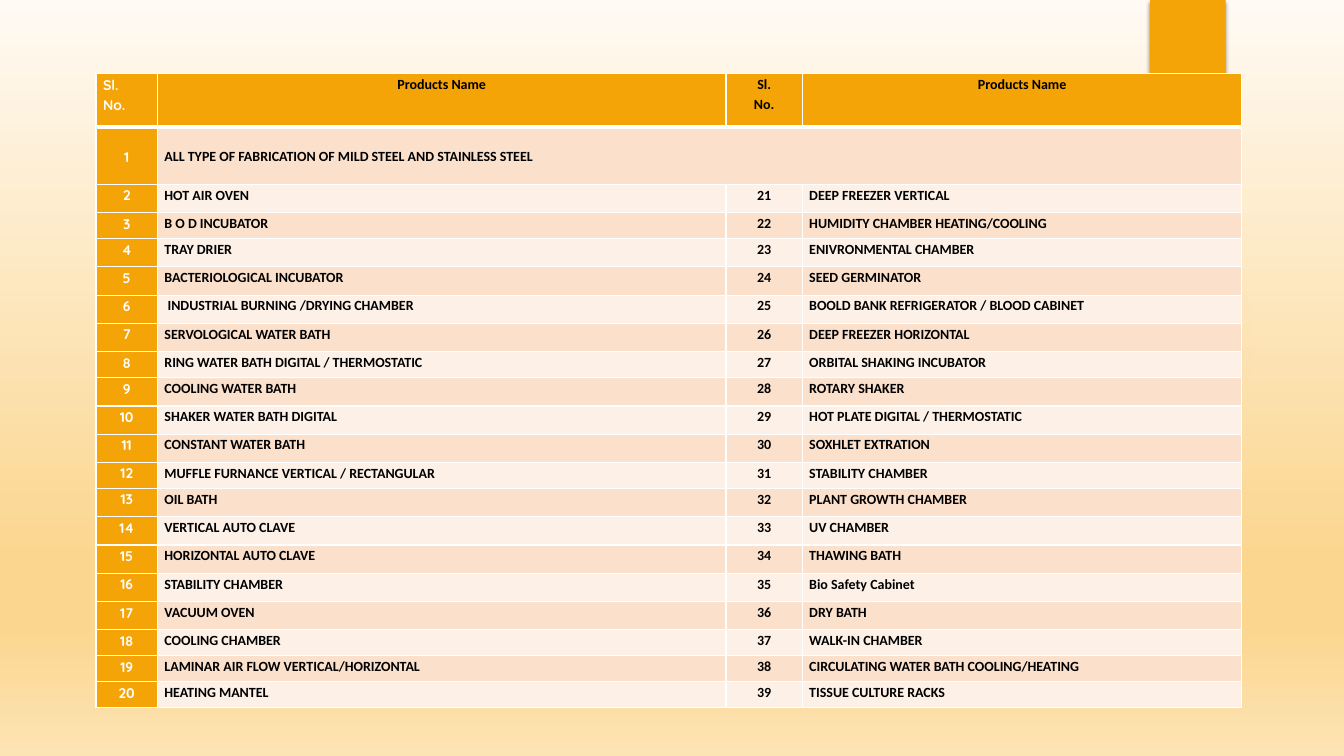
from pptx import Presentation
from pptx.dml.color import RGBColor
from pptx.enum.shapes import MSO_SHAPE as Shape
from pptx.enum.text import MSO_ANCHOR as Anchor, PP_ALIGN as Align
from pptx.oxml import parse_xml
from pptx.oxml.ns import nsdecls, qn
from pptx.util import Pt

GOLD, PEACH, CREAM = "F5A408", "FBE0CC", "FDF0E7"
BLACK, WHITE = "000000", "FFFFFF"
COLS = [43.9, 406.1, 54.5, 314]
SHORT = {3, 8, 12, 18, 19, 20}
FIRST = "ALL TYPE OF FABRICATION OF MILD STEEL AND STAINLESS STEEL"
LEFT = [
    "HOT AIR OVEN", "B O D INCUBATOR", "TRAY DRIER", "BACTERIOLOGICAL INCUBATOR",
    " INDUSTRIAL BURNING /DRYING CHAMBER", "SERVOLOGICAL WATER BATH",
    "RING WATER BATH DIGITAL / THERMOSTATIC", "COOLING WATER BATH",
    "SHAKER WATER BATH DIGITAL", "CONSTANT WATER BATH",
    "MUFFLE FURNANCE VERTICAL / RECTANGULAR", "OIL BATH", "VERTICAL AUTO CLAVE",
    "HORIZONTAL AUTO CLAVE", "STABILITY CHAMBER", "VACUUM OVEN", "COOLING CHAMBER",
    "LAMINAR AIR FLOW VERTICAL/HORIZONTAL", "HEATING MANTEL",
]
RIGHT = [
    "DEEP FREEZER VERTICAL", "HUMIDITY CHAMBER HEATING/COOLING",
    "ENIVRONMENTAL CHAMBER", "SEED GERMINATOR",
    "BOOLD BANK REFRIGERATOR / BLOOD CABINET", "DEEP FREEZER HORIZONTAL",
    "ORBITAL SHAKING INCUBATOR", "ROTARY SHAKER", "HOT PLATE DIGITAL / THERMOSTATIC",
    "SOXHLET EXTRATION", "STABILITY CHAMBER", "PLANT GROWTH CHAMBER", "UV CHAMBER",
    "THAWING BATH", "Bio Safety Cabinet", "DRY BATH", "WALK-IN CHAMBER",
    "CIRCULATING WATER BATH COOLING/HEATING", "TISSUE CULTURE RACKS",
]


def color(code):
    return RGBColor.from_string(code)


def apply(item, values):
    for name, value in values.items():
        setattr(item, name, value)


class Deck:
    """Holds the text style and the current slide."""

    def __init__(self):
        self.prs = Presentation()
        apply(self.prs, {"slide_width": Pt(960), "slide_height": Pt(540)})
        self.slide = self.prs.slides.add_slide(self.prs.slide_layouts[6])
        self.font = {"size": Pt(10), "bold": True}
        self.inset = {"margin_left": Pt(5), "margin_right": Pt(5),
                      "margin_top": 0, "margin_bottom": 0}

    def blend(self, owner, fill, stops, shade):
        fill.gradient()
        old = owner.find(".//" + qn("a:gradFill"))
        marks = "".join(
            f'<a:gs pos="{at * 1000}"><a:srgbClr val="{code}">'
            f'<a:alpha val="{alpha * 1000}"/></a:srgbClr></a:gs>'
            for at, code, alpha in stops)
        new = parse_xml(f'<a:gradFill {nsdecls("a")} rotWithShape="1">'
                        f'<a:gsLst>{marks}</a:gsLst>{shade}</a:gradFill>')
        old.getparent().replace(old, new)

    def backdrop(self, stops):
        self.blend(self.slide.element, self.slide.background.fill, stops,
                   '<a:lin ang="5400000" scaled="0"/>')

    def shape(self, kind, *box):
        item = self.slide.shapes.add_shape(kind, *map(Pt, box))
        item.shadow.inherit = False
        item.line.fill.background()
        return item

    def glow(self, stops, *box):
        item = self.shape(Shape.OVAL, *box)
        self.blend(item.element, item.fill, stops,
                   '<a:path path="circle"><a:fillToRect l="50000" t="50000" '
                   'r="50000" b="50000"/></a:path>')

    def tab(self, code, *box):
        item = self.shape(Shape.RECTANGLE, *box)
        item.fill.solid()
        item.fill.fore_color.rgb = color(code)
        item.element.spPr.find(qn("a:effectLst")).append(parse_xml(
            f'<a:outerShdw {nsdecls("a")} blurRad="{Pt(3)}" dist="{Pt(2)}" '
            f'dir="5400000" rotWithShape="0"><a:srgbClr val="{BLACK}">'
            '<a:alpha val="45000"/></a:srgbClr></a:outerShdw>'))

    def table(self, left, top, cols, rows):
        grid = self.slide.shapes.add_table(
            len(rows), len(cols), *map(Pt, (left, top, sum(cols), sum(rows)))).table
        apply(grid, {"first_row": False, "horz_banding": False})
        for col, width in zip(grid.columns, cols):
            col.width = Pt(width)
        for row, height in zip(grid.rows, rows):
            row.height = Pt(height)
        return grid

    def edges(self, cell, top, low):
        props = cell._tc.get_or_add_tcPr()
        for spot, (side, width) in enumerate(zip("LRTB", (1, 1, top, low))):
            props.insert(spot, parse_xml(
                f'<a:ln{side} {nsdecls("a")} w="{Pt(width)}"><a:solidFill>'
                f'<a:srgbClr val="{WHITE}"/></a:solidFill></a:ln{side}>'))

    def cell(self, cell, text, fill, face, ink, align, after=0):
        apply(cell, self.inset)
        cell.fill.solid()
        cell.fill.fore_color.rgb = color(fill)
        cell.text = text
        paras = cell.text_frame.paragraphs
        for para in paras:
            apply(para, {"alignment": align, "line_spacing": 1.15})
            for run in para.runs:
                apply(run.font, {**self.font, "name": face})
                run.font.color.rgb = color(ink)
        if after:
            paras[-1].space_after = Pt(after)

    def products(self, left, top):
        pairs = list(zip(LEFT, RIGHT))
        data = [["Sl.\nNo.", "Products Name"] * 2, ["1", FIRST, "", ""]]
        data += [[str(n), a, str(n + 19), b] for n, (a, b) in enumerate(pairs, 2)]
        rows = [38, 41] + [18.6 if n in SHORT else 20.2 for n in range(2, len(data))]
        grid = self.table(left, top, COLS, rows)
        grid.cell(1, 1).merge(grid.cell(1, 3))
        for r, line in enumerate(data):
            for c, text in enumerate(line):
                cell = grid.cell(r, c)
                fill = GOLD if r == 0 or c == 0 else PEACH if r % 2 else CREAM
                face, ink = ("Calibri", BLACK) if c else ("Quicksand", WHITE)
                mid = c > 0 if r == 0 else c % 2 == 0
                align = Align.CENTER if mid else Align.LEFT
                self.cell(cell, text, fill, face, ink, align,
                          10 if r == 0 and c != 2 else 0)
                self.edges(cell, 3 if r == 1 else 1, 3 if r == 0 else 1)
                if r == 1:
                    cell.vertical_anchor = Anchor.MIDDLE


def main():
    deck = Deck()
    deck.backdrop([(0, "FFFAF3", 100), (74, "FBD68F", 100),
                   (83, "FBD68F", 100), (100, "FDE4B4", 100)])
    deck.glow([(at, "FAC96A", alpha) for at, alpha in ((0, 7), (36, 6), (69, 0))],
              677.5, 131.8, 221.8, 221.8)
    deck.tab(GOLD, 821.5, 0, 54, 90)
    deck.products(68.6, 52.7)
    deck.prs.save("out.pptx")


if __name__ == "__main__":
    main()
